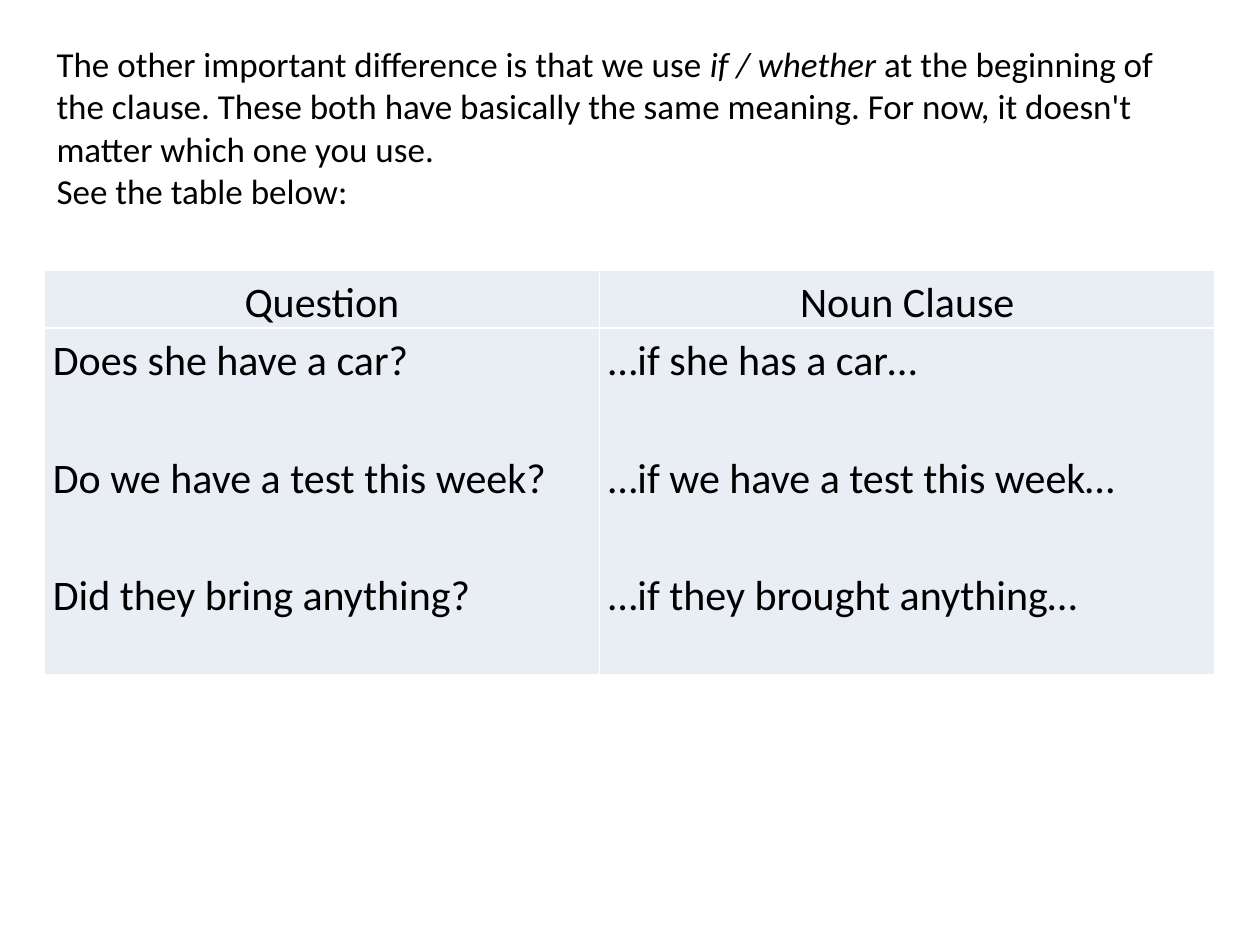
import pptx
import pptx.dml.color
import pptx.enum.text
import pptx.oxml
import pptx.oxml.ns
import pptx.util

Pt = pptx.util.Pt
BLACK = pptx.dml.color.RGBColor(0, 0, 0)
CELL_FILL = pptx.dml.color.RGBColor(0xE9, 0xED, 0xF4)
BORDER_COLOR = pptx.dml.color.RGBColor(0xFF, 0xFF, 0xFF)
FONT = "Calibri"
LEFT, WIDTH = 25.2, 669


def format_runs(paragraph, size):
    for run in paragraph.runs:
        run.font.name = FONT
        run.font.size = Pt(size)
        run.font.color.rgb = BLACK


def add_borders(cell):
    properties = cell._tc.get_or_add_tcPr()
    for position, side in enumerate(("lnL", "lnR", "lnT", "lnB")):
        line = pptx.oxml.parse_xml(
            f'<a:{side} {pptx.oxml.ns.nsdecls("a")} w="{Pt(1)}"><a:solidFill>'
            f'<a:srgbClr val="{BORDER_COLOR}"/></a:solidFill></a:{side}>')
        properties.insert(position, line)


presentation = pptx.Presentation()
presentation.slide_width = Pt(720)
presentation.slide_height = Pt(540)
slide = presentation.slides.add_slide(presentation.slide_layouts[6])

# Introduction
introduction = slide.shapes.add_textbox(Pt(LEFT), Pt(21), Pt(WIDTH), Pt(126))
text_frame = introduction.text_frame
text_frame.word_wrap = True
paragraph = text_frame.paragraphs[0]
for text, italic in (
    ("The other important difference is that we use ", False),
    ("if / whether", True),
    (" at the beginning of the clause. These both have basically the same "
     "meaning. For now, it doesn't matter which one you use.", False),
):
    run = paragraph.add_run()
    run.text = text
    run.font.italic = italic
text_frame.add_paragraph().text = "See the table below:"
for paragraph in text_frame.paragraphs:
    format_runs(paragraph, 20)

# Table of questions and noun clauses
rows = [
    ["Question", "Noun Clause"],
    ["Does she have a car?\nDo we have a test this week?\nDid they bring anything?",
     "…if she has a car…\n…if we have a test this week…\n…if they brought anything…"],
]
column_widths = [317.5, 351.5]
row_heights = [33, 198.5]
table = slide.shapes.add_table(
    len(rows), len(column_widths), Pt(LEFT), Pt(154.2), Pt(WIDTH), Pt(sum(row_heights))).table
for column, width in zip(table.columns, column_widths):
    column.width = Pt(width)
for row, height in zip(table.rows, row_heights):
    row.height = Pt(height)

for row_index, texts in enumerate(rows):
    for column_index, text in enumerate(texts):
        cell = table.cell(row_index, column_index)
        cell.margin_left = cell.margin_right = Pt(5)
        cell.margin_top = cell.margin_bottom = 0
        cell.fill.solid()
        cell.fill.fore_color.rgb = CELL_FILL
        add_borders(cell)
        cell.text_frame.text = text
        for index, paragraph in enumerate(cell.text_frame.paragraphs):
            paragraph.line_spacing = 1.15
            if row_index == 0:
                paragraph.alignment = pptx.enum.text.PP_ALIGN.CENTER
            if index > 0:
                paragraph.space_before = Pt(33.6)
            format_runs(paragraph, 24)
            for run in paragraph.runs:
                run.font.bold = False

presentation.save("out.pptx")
